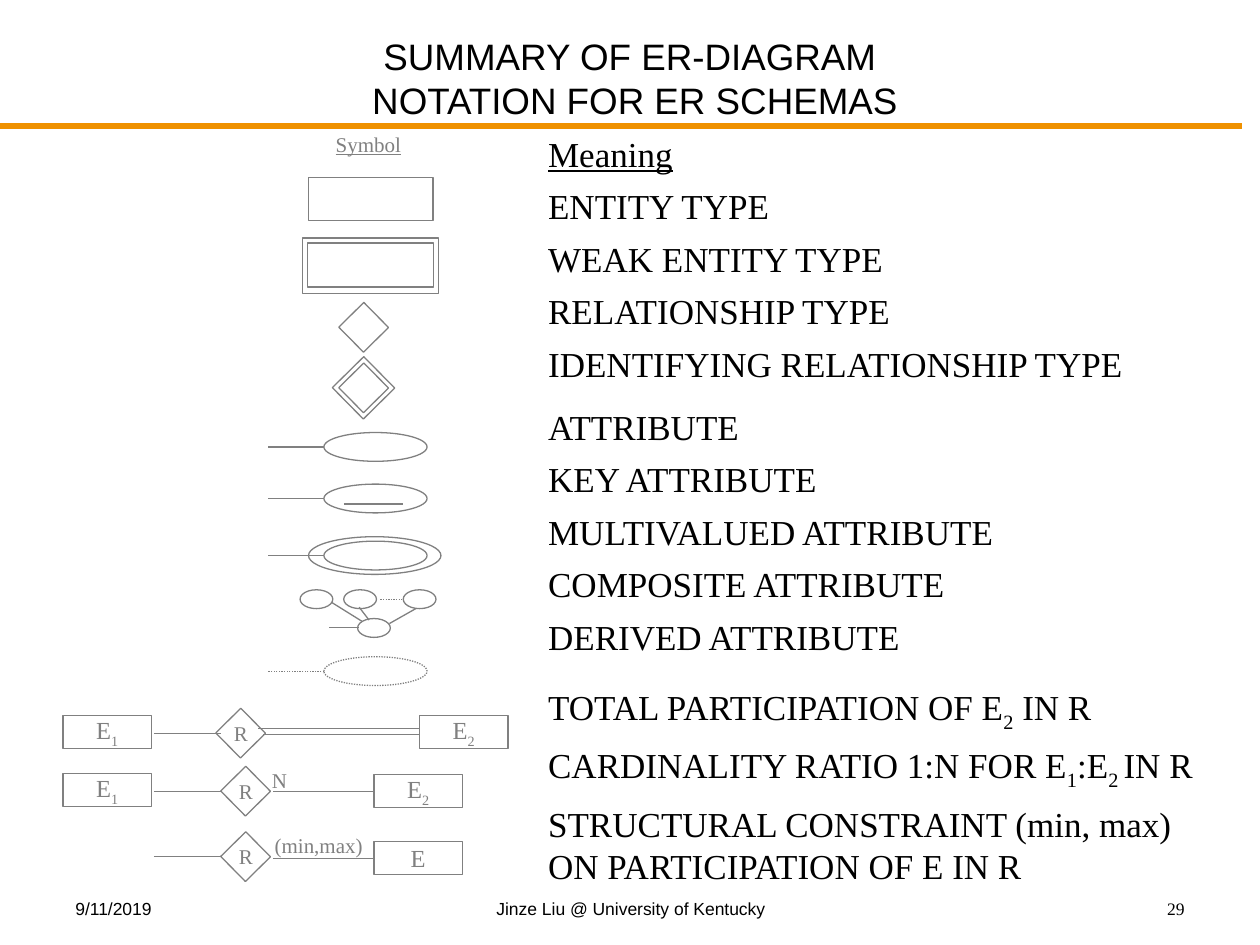
from dataclasses import dataclass

from lxml.etree import SubElement
from pptx import Presentation
from pptx.dml.color import RGBColor
from pptx.enum.dml import MSO_LINE
from pptx.enum.shapes import MSO_CONNECTOR, MSO_SHAPE
from pptx.enum.text import MSO_ANCHOR as Anchor, PP_ALIGN as Align
from pptx.oxml.ns import qn
from pptx.util import Cm, Pt


@dataclass(frozen=True)
class Theme:
    ink: RGBColor = RGBColor(0, 0, 0)
    symbol: RGBColor = RGBColor(0x80, 0x80, 0x80)
    rule: RGBColor = RGBColor(0xEF, 0x91, 0x00)
    sans: str = "Arial"
    serif: str = "Times New Roman"
    title: int = 21
    meaning: int = 20
    entity: int = 14
    label: int = 12
    footer: int = 10
    thin: float = 0.75


THEME = Theme()
RECT, OVAL = MSO_SHAPE.RECTANGLE, MSO_SHAPE.OVAL

# Text and the space before it in points; every second piece between bars is a subscript
MEANINGS = [
    ("Meaning", 0),
    ("ENTITY TYPE", 6),
    ("WEAK ENTITY TYPE", 6),
    ("RELATIONSHIP TYPE", 6),
    ("IDENTIFYING RELATIONSHIP TYPE", 6),
    ("ATTRIBUTE", 12),
    ("KEY ATTRIBUTE", 6),
    ("MULTIVALUED ATTRIBUTE", 6),
    ("COMPOSITE ATTRIBUTE", 6),
    ("DERIVED ATTRIBUTE", 6),
    ("TOTAL PARTICIPATION OF E|2| IN R", 16),
    ("CARDINALITY RATIO 1:N FOR E|1|:E|2 |IN R", 6),
    ("STRUCTURAL CONSTRAINT (min, max) ON PARTICIPATION OF E IN R", 6),
]


def write(para, text, size, color=THEME.ink, face=THEME.serif, align=Align.LEFT):
    para.alignment = align
    font = para.font
    font.size, font.name, font.color.rgb = Pt(size), face, color
    for index, piece in enumerate(text.split("|")):
        span = para.add_run()
        span.text = piece
        if index % 2:
            span._r.get_or_add_rPr().set("baseline", "-25000")


def add_box(page, x, y, w, h, wrap=True):
    box = page.shapes.add_textbox(Cm(x), Cm(y), Cm(w), Cm(h))
    box.text_frame.word_wrap = wrap
    return box.text_frame


def add_label(page, text, x, y, w, underline=False):
    para = add_box(page, x, y, w, 0.76, wrap=False).paragraphs[0]
    write(para, text, THEME.label, THEME.symbol, align=Align.CENTER)
    para.font.underline = underline


def add_outline(page, kind, x, y, w, h, dotted=False):
    shape = page.shapes.add_shape(kind, Cm(x), Cm(y), Cm(w), Cm(h))
    shape.shadow.inherit = False
    shape.fill.background()
    shape.line.color.rgb = THEME.symbol
    shape.line.width = Pt(THEME.thin)
    if dotted:
        shape.line.dash_style = MSO_LINE.ROUND_DOT
    return shape


def add_line(page, x1, y1, x2, y2, dotted=False, color=THEME.symbol, width=THEME.thin):
    line = page.shapes.add_connector(
        MSO_CONNECTOR.STRAIGHT, Cm(x1), Cm(y1), Cm(x2), Cm(y2))
    line.line.color.rgb = color
    line.line.width = Pt(width)
    if dotted:
        line.line.dash_style = MSO_LINE.ROUND_DOT
    SubElement(line._element.spPr, qn("a:effectLst"))


def add_diamond(page, x, y, side=0.71):
    """Square centred on x, y and turned on its corner."""
    add_outline(page, RECT, x - side / 2, y - side / 2, side, side).rotation = 45.4


def add_attribute(page, y, dotted=False):
    add_outline(page, OVAL, 6.53, y - 0.29, 2.08, 0.58, dotted)
    add_line(page, 6.53, y, 5.41, y, dotted)


def add_entity(page, text, x, y):
    frame = add_outline(page, RECT, x, y, 1.78, 0.66).text_frame
    frame.word_wrap = False
    frame.vertical_anchor = Anchor.MIDDLE
    frame.margin_top = frame.margin_bottom = 0
    write(frame.paragraphs[0], text, THEME.entity, THEME.symbol, align=Align.CENTER)


def add_relationship(page, x, y):
    add_line(page, 3.1, y, 4.45, y)
    add_diamond(page, x, y)
    add_label(page, "R", x - 0.39, y - 0.38, 0.79)


def add_composite(page):
    for x, y in [(6.05, 11.89), (6.93, 11.89), (8.13, 11.89), (7.21, 12.47)]:
        add_outline(page, OVAL, x, y, 0.66, 0.38)
    add_line(page, 7.24, 12.65, 6.63, 12.65)
    add_line(page, 6.68, 12.14, 7.29, 12.52)
    add_line(page, 7.24, 12.24, 7.44, 12.5)
    add_line(page, 7.85, 12.57, 8.38, 12.27)
    add_line(page, 7.67, 12.09, 8.1, 12.09, dotted=True)


def add_title(page):
    title = page.shapes.title
    title.left, title.top, title.width, title.height = Cm(0.2), Cm(0.18), Cm(25.2), Cm(2.92)
    frame = title.text_frame
    frame.vertical_anchor = Anchor.MIDDLE
    frame.margin_top, frame.margin_bottom = 0, Cm(0.13)
    para = frame.paragraphs[0]
    para.text = "SUMMARY OF ER-DIAGRAM \vNOTATION FOR ER SCHEMAS"
    para.alignment = Align.CENTER
    para.font.size, para.font.name = Pt(THEME.title), THEME.sans
    para.font.color.rgb = THEME.ink
    add_line(page, 0, 2.54, 25.04, 2.54, color=THEME.rule, width=3)


def add_meanings(page):
    frame = add_box(page, 10.8, 2.54, 13.77, 15.4)
    for index, (text, space) in enumerate(MEANINGS):
        para = frame.add_paragraph() if index else frame.paragraphs[0]
        write(para, text, THEME.meaning)
        para.space_before = Pt(space)
        para.font.underline = index == 0


def add_symbols(page):
    add_label(page, "Symbol", 6.51, 2.52, 1.83, underline=True)
    # Entity types
    add_outline(page, RECT, 6.22, 3.58, 2.51, 0.86)
    add_outline(page, RECT, 6.2, 4.9, 2.54, 0.89)
    add_outline(page, RECT, 6.1, 4.8, 2.74, 1.12)
    # Relationship types
    add_diamond(page, 7.33, 6.6)
    add_diamond(page, 7.33, 7.82)
    add_diamond(page, 7.33, 7.82, side=0.89)
    # Attributes: plain, key, multivalued, composite, derived
    for y in (9.01, 10.05, 11.2):
        add_attribute(page, y)
    add_line(page, 6.93, 10.16, 8.13, 10.16)
    add_outline(page, OVAL, 6.22, 10.82, 2.67, 0.76)
    add_composite(page)
    add_attribute(page, 13.53, dotted=True)


def add_constraints(page):
    # Total participation
    add_entity(page, "E|1", 1.27, 14.43)
    add_relationship(page, 4.85, 14.78)
    add_line(page, 5.21, 14.68, 8.46, 14.68)
    add_line(page, 5.31, 14.81, 8.46, 14.81)
    add_entity(page, "E|2", 8.46, 14.43)
    # Cardinality ratio
    add_entity(page, "E|1", 1.27, 15.6)
    add_relationship(page, 4.95, 15.95)
    add_line(page, 5.51, 15.95, 7.54, 15.95)
    add_label(page, "N", 5.23, 15.34, 0.81)
    add_entity(page, "E|2", 7.54, 15.62)
    # Structural constraint
    add_relationship(page, 4.95, 17.27)
    add_line(page, 5.51, 17.3, 7.54, 17.3)
    add_label(page, "(min,max)", 5.28, 16.66, 2.29)
    add_entity(page, "E", 7.54, 16.97)


def add_footer(page):
    for text, x, w, align, face in [
        ("9/11/2019", 1.27, 5.92, Align.LEFT, THEME.sans),
        ("Jinze Liu @ University of Kentucky", 8.69, 8.05, Align.CENTER, THEME.sans),
        ("29", 18.21, 5.92, Align.RIGHT, THEME.serif),
    ]:
        frame = add_box(page, x, 17.98, w, 0.64)
        write(frame.paragraphs[0], text, THEME.footer, face=face, align=align)


def main():
    deck = Presentation()
    deck.slide_width, deck.slide_height = Cm(25.4), Cm(19.05)
    page = deck.slides.add_slide(deck.slide_layouts[5])
    add_title(page)
    add_meanings(page)
    add_symbols(page)
    add_constraints(page)
    add_footer(page)
    deck.save("out.pptx")


if __name__ == "__main__":
    main()
